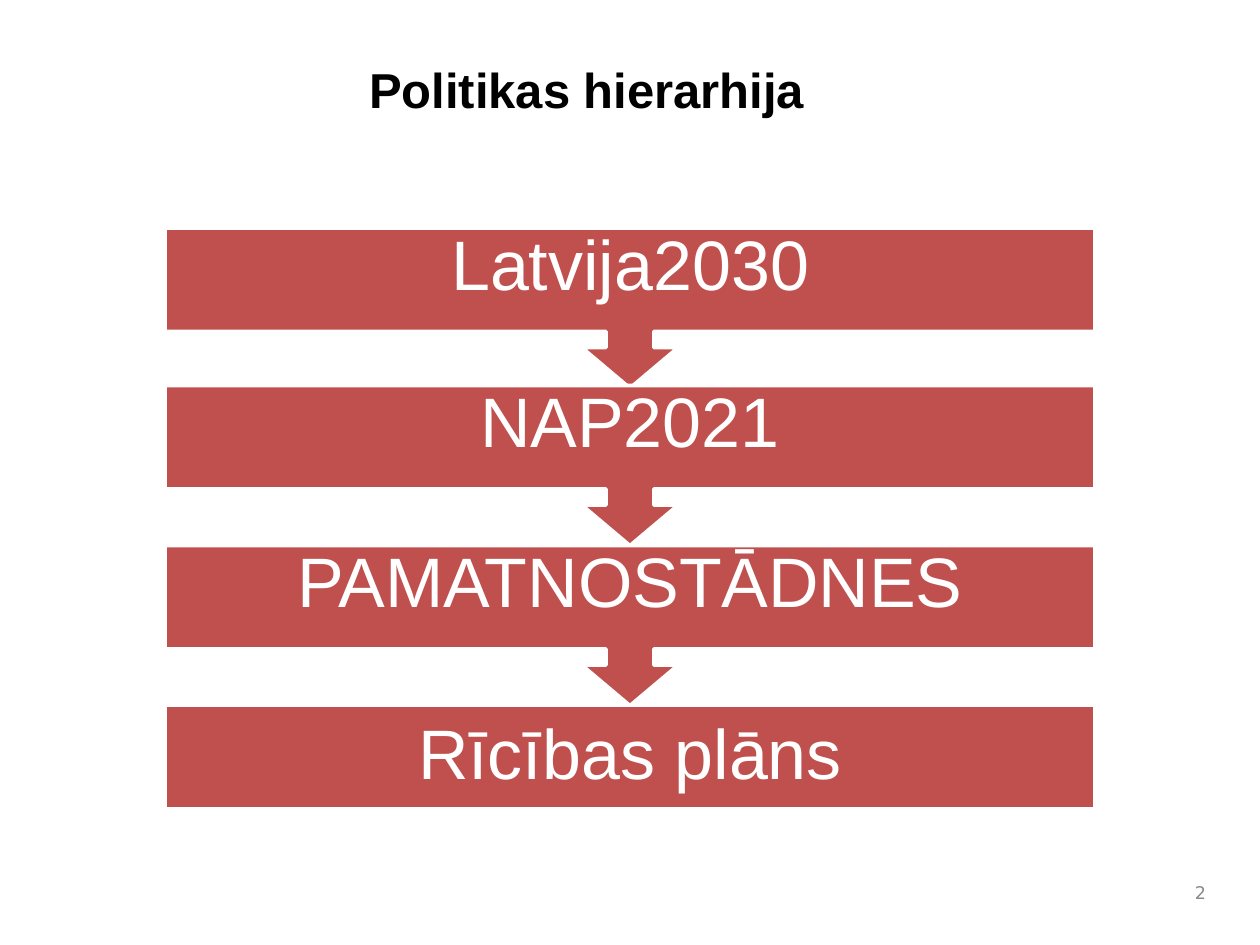
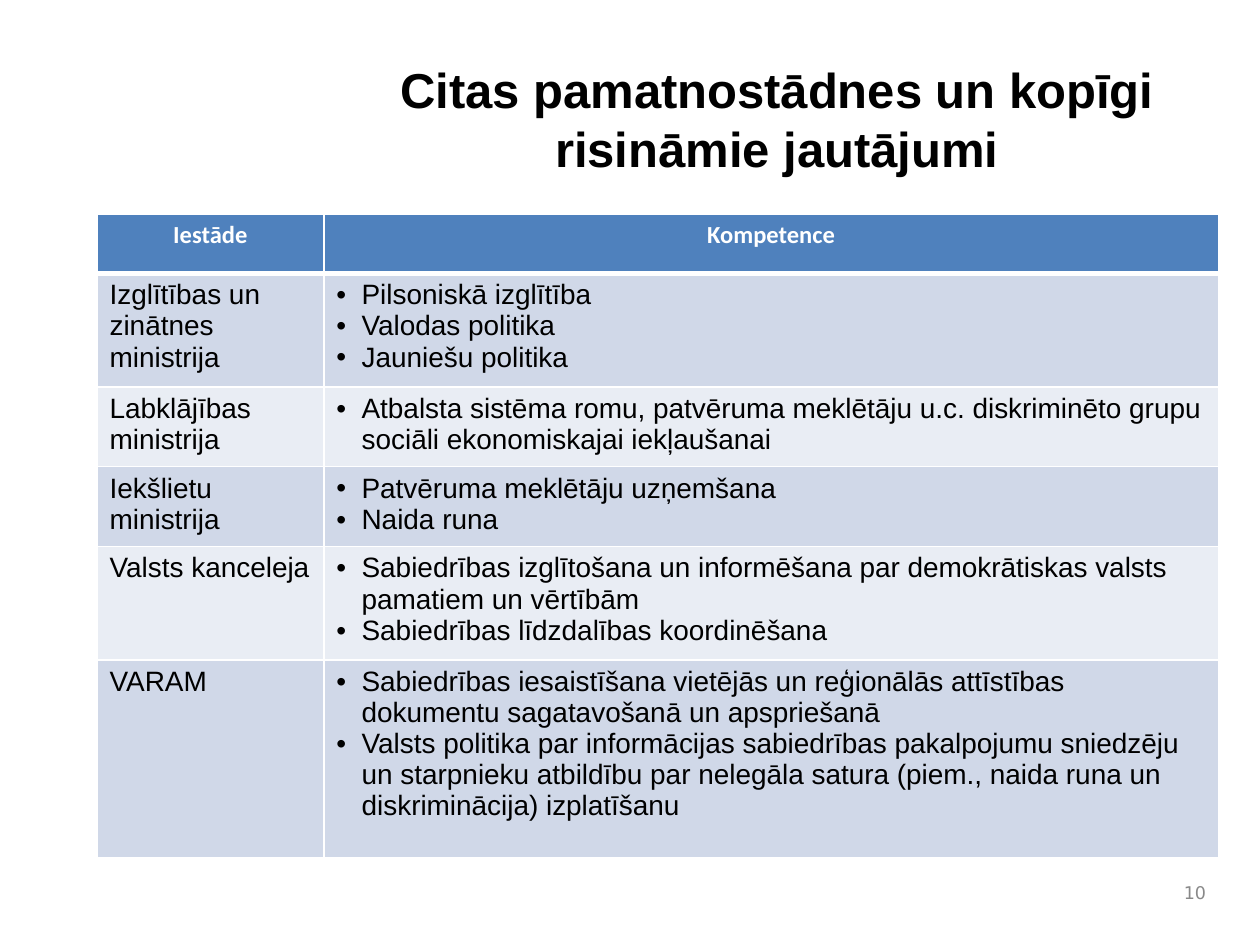
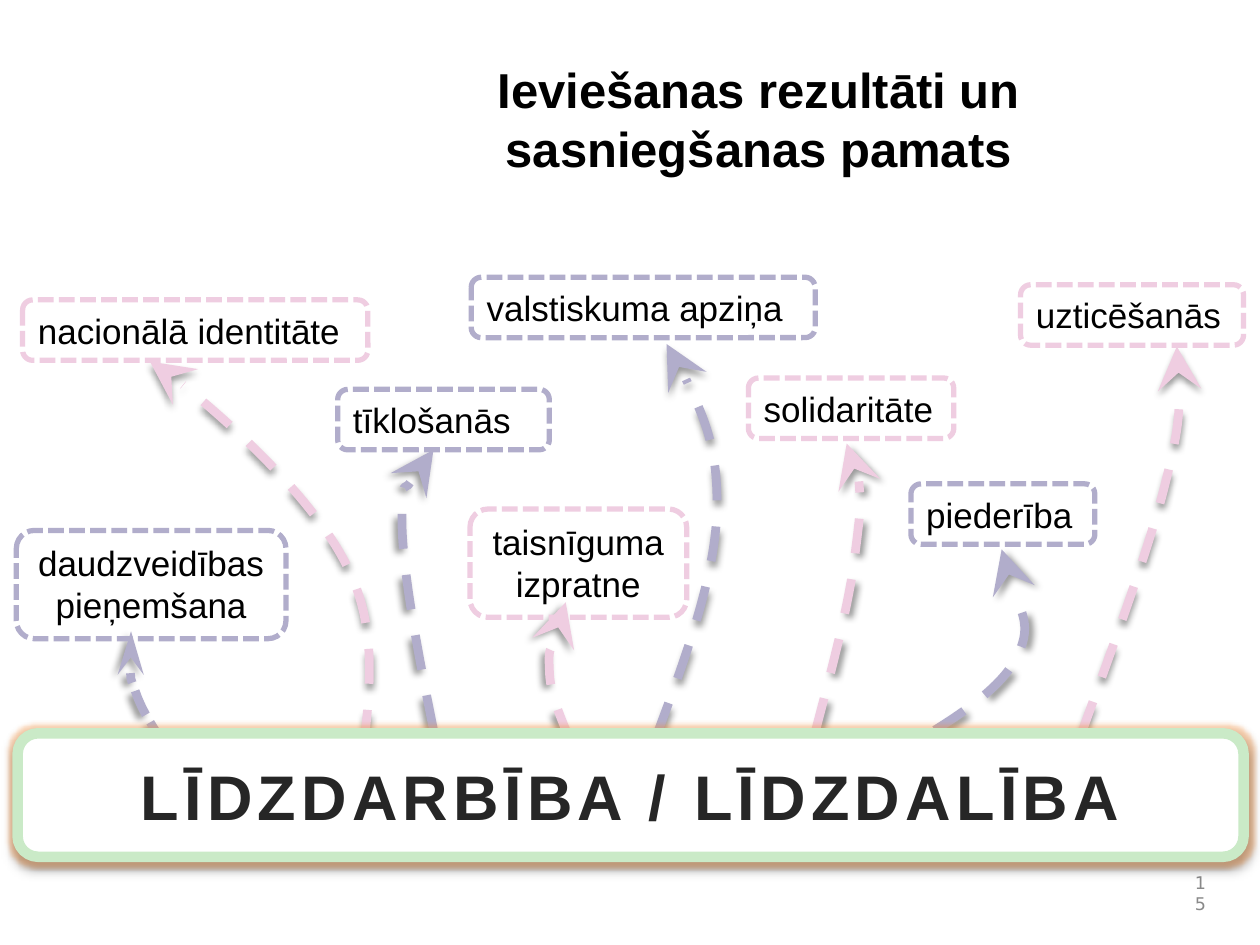
from typing import NamedTuple, Optional

from lxml.etree import SubElement
from pptx import Presentation
from pptx.dml.color import RGBColor
from pptx.enum.dml import MSO_LINE
from pptx.enum.shapes import MSO_SHAPE
from pptx.enum.text import MSO_ANCHOR, MSO_AUTO_SIZE, PP_ALIGN
from pptx.oxml.ns import qn
from pptx.util import Inches, Pt

BLACK = RGBColor(0x00, 0x00, 0x00)
WHITE = RGBColor(0xFF, 0xFF, 0xFF)
GRAY = RGBColor(0x89, 0x89, 0x89)
CHARCOAL = RGBColor(0x26, 0x26, 0x26)
RED = RGBColor(0xC0, 0x50, 0x4D)
BLUE = RGBColor(0x4F, 0x81, 0xBD)
BAND_DARK = RGBColor(0xD0, 0xD8, 0xE8)
BAND_LIGHT = RGBColor(0xE9, 0xED, 0xF4)
PINK = RGBColor(0xEF, 0xCD, 0xE1)
LILAC = RGBColor(0xB1, 0xAD, 0xCB)
GREEN = RGBColor(0xCA, 0xEA, 0xC7)
ORANGE = RGBColor(0xF7, 0x96, 0x46)


class Level(NamedTuple):
    text: str
    top: float


class Institution(NamedTuple):
    name: str
    duties: list[str]
    height: float


class Value(NamedTuple):
    text: str
    left: float
    top: float
    width: float
    color: RGBColor
    height: float = 0.48
    align: Optional[PP_ALIGN] = None


class Arrow(NamedTuple):
    color: RGBColor
    shadow_angle: int
    points: list[tuple[float, float]]  # start, then three per curve
    dash: MSO_LINE = MSO_LINE.DASH
    head_width: str = "lg"


LEVELS = [
    Level("Latvija2030", 1.81),
    Level("NAP2021", 3.06),
    Level("PAMATNOSTĀDNES", 4.33),
    Level("Rīcības plāns", 5.6),
]

INSTITUTIONS = [
    Institution("Izglītības un zinātnes ministrija",
                ["Pilsoniskā izglītība", "Valodas politika", "Jauniešu politika"], 0.88),
    Institution("Labklājības ministrija",
                ["Atbalsta sistēma romu, patvēruma meklētāju u.c. diskriminēto grupu "
                 "sociāli ekonomiskajai iekļaušanai"], 0.62),
    Institution("Iekšlietu ministrija", ["Patvēruma meklētāju uzņemšana", "Naida runa"], 0.62),
    Institution("Valsts kanceleja",
                ["Sabiedrības izglītošana un informēšana par demokrātiskas valsts "
                 "pamatiem un vērtībām",
                 "Sabiedrības līdzdalības koordinēšana"], 0.88),
    Institution("VARAM",
                ["Sabiedrības iesaistīšana vietējās un reģionālās attīstības dokumentu "
                 "sagatavošanā un apspriešanā",
                 "Valsts politika par informācijas sabiedrības pakalpojumu sniedzēju un "
                 "starpnieku atbildību par nelegāla satura (piem., naida runa un "
                 "diskriminācija) izplatīšanu"], 1.57),
]

VALUES = [
    Value("piederība", 7.23, 3.84, 1.46, LILAC),
    Value("nacionālā identitāte", 0.18, 2.38, 2.74, PINK),
    Value("valstiskuma apziņa", 3.74, 2.2, 2.73, LILAC),
    Value("uzticēšanās", 8.1, 2.26, 1.77, PINK),
    Value("solidaritāte", 5.94, 3, 1.63, PINK),
    Value("tīklošanās", 2.68, 3.09, 1.68, LILAC),
    Value("taisnīguma izpratne", 3.73, 4.04, 1.72, PINK, 0.86, PP_ALIGN.CENTER),
    Value("daudzveidības pieņemšana", 0.13, 4.21, 2.14, LILAC, 0.86, PP_ALIGN.CENTER),
]

ARROWS = [
    Arrow(LILAC, 135, [(1.47, 6.13), (1.31, 5.92), (1.16, 5.71), (1.09, 5.53),
                       (1.02, 5.34), (1.03, 5.37), (1.04, 5.01)], MSO_LINE.SQUARE_DOT, "med"),
    Arrow(PINK, 90, [(2.89, 5.91), (2.94, 5.41), (3, 4.92), (2.71, 4.41),
                     (2.43, 3.91), (1.47, 3.01), (1.19, 2.87)]),
    Arrow(LILAC, 135, [(3.44, 5.79), (3.31, 5.15), (3.19, 4.5), (3.19, 4.13),
                       (3.19, 3.76), (3.4, 3.69), (3.44, 3.57)]),
    Arrow(PINK, 135, [(4.53, 5.89), (4.45, 5.69), (4.36, 5.5), (4.36, 5.31),
                      (4.35, 5.13), (4.5, 4.85), (4.49, 4.78)]),
    Arrow(LILAC, 90, [(5.21, 5.84), (5.45, 5.2), (5.68, 4.56), (5.69, 4.04),
                      (5.7, 3.52), (5.42, 2.9), (5.29, 2.73)]),
    Arrow(PINK, 45, [(6.47, 5.81), (6.61, 5.28), (6.75, 4.75), (6.79, 4.37),
                     (6.84, 3.99), (6.84, 3.63), (6.72, 3.52)]),
    Arrow(LILAC, 45, [(7, 6.04), (7.44, 5.79), (7.89, 5.53), (8.05, 5.25),
                      (8.21, 4.97), (7.99, 4.61), (7.95, 4.36)]),
    Arrow(PINK, 90, [(8.58, 5.83), (8.84, 5.11), (9.11, 4.38), (9.24, 3.87),
                     (9.37, 3.36), (9.39, 2.87), (9.34, 2.75)]),
]


# Text and formatting helpers
def write_text(frame, *lines: str, size: float, color: RGBColor = BLACK, font: str = "Arial",
               bold: bool = False, align: Optional[PP_ALIGN] = None, bullet: bool = False,
               line_spacing: Optional[float] = None, tracking: float = 0) -> None:
    for index, line in enumerate(lines):
        paragraph = frame.add_paragraph() if index else frame.paragraphs[0]
        paragraph.alignment = align or PP_ALIGN.LEFT
        if line_spacing:
            paragraph.line_spacing = line_spacing
        if bullet:
            properties = paragraph._p.get_or_add_pPr()
            properties.set("marL", str(Inches(0.2)))
            properties.set("indent", str(-Inches(0.2)))
            SubElement(properties, qn("a:buFont"), typeface="Arial")
            SubElement(properties, qn("a:buChar"), char="•")
        run = paragraph.add_run()
        run.text = line
        run.font.name, run.font.size, run.font.bold = font, Pt(size), bold
        run.font.color.rgb = color
        if tracking:
            run._r.get_or_add_rPr().set("spc", str(round(tracking * 100)))


def set_line(shape, color: RGBColor, width: float, dash: Optional[MSO_LINE] = None) -> None:
    shape.line.color.rgb = color
    shape.line.width = Pt(width)
    if dash:
        shape.line.dash_style = dash


def add_effect(shape, kind: str, color: RGBColor, **attributes: str) -> None:
    effects = shape._element.spPr.find(qn("a:effectLst"))
    effect = SubElement(effects, qn(f"a:{kind}"), **attributes)
    tone = SubElement(effect, qn("a:srgbClr"), val=str(color))
    SubElement(tone, qn("a:alpha"), val="40000")


def add_shadow(shape, angle: int) -> None:
    add_effect(shape, "outerShdw", BLACK, blurRad=str(Pt(4)), dist=str(Pt(3)),
               dir=str(angle * 60000), rotWithShape="0")


def add_outline(slide, points: list[tuple[float, float]], close: bool):
    start, *rest = [(Inches(x), Inches(y)) for x, y in points]
    builder = slide.shapes.build_freeform(*start)
    builder.add_line_segments(rest, close=close)
    shape = builder.convert_to_shape()
    shape.shadow.inherit = False
    return shape


def add_round_box(slide, left: float, top: float, width: float, height: float):
    box = slide.shapes.add_shape(MSO_SHAPE.ROUNDED_RECTANGLE, Inches(left), Inches(top),
                                 Inches(width), Inches(height))
    box.shadow.inherit = False
    box.text_frame.word_wrap = True
    return box


# Shared slide frame: title and page number
def add_titled_slide(presentation, title: str, number: str, title_left: float = 2.83,
                     align: PP_ALIGN = PP_ALIGN.CENTER, number_width: float = 0.33):
    slide = presentation.slides.add_slide(presentation.slide_layouts[5])
    holder = slide.shapes.title
    holder.left, holder.top = Inches(title_left), Inches(0.42)
    holder.width, holder.height = Inches(9.5 - title_left), Inches(1.13)
    holder.text_frame.vertical_anchor = MSO_ANCHOR.TOP
    holder.text_frame.auto_size = MSO_AUTO_SIZE.NONE
    write_text(holder.text_frame, title, size=28, bold=True, align=align)

    page = slide.shapes.add_textbox(Inches(9.67 - number_width), Inches(6.92),
                                    Inches(number_width), Inches(0.33))
    page.text_frame.word_wrap = True
    page.text_frame.vertical_anchor = MSO_ANCHOR.MIDDLE
    write_text(page.text_frame, number, size=10, color=GRAY, font="DejaVu Sans",
               align=PP_ALIGN.RIGHT)
    return slide


# Policy hierarchy
def add_level(slide, level: Level, has_arrow: bool) -> None:
    left, right, middle = 1.31, 8.69, 5
    top, bottom = level.top, level.top + 0.82
    points = [(left, top), (right, top), (right, bottom)]
    if has_arrow:
        neck = bottom + 0.13
        half = [(0.19, bottom), (0.19, neck), (0.38, neck)]
        points += [(middle + x, y) for x, y in half]
        points.append((middle, top + 1.27))
        points += [(middle - x, y) for x, y in reversed(half)]
    points.append((left, bottom))

    shape = add_outline(slide, points, close=True)
    shape.fill.solid()
    shape.fill.fore_color.rgb = RED
    set_line(shape, WHITE, 2)
    frame = shape.text_frame
    frame.word_wrap = True
    frame.vertical_anchor = MSO_ANCHOR.MIDDLE
    frame.margin_left = frame.margin_right = frame.margin_top = Inches(0.31)
    frame.margin_bottom = Inches(0.95 if has_arrow else 0.31)
    write_text(frame, level.text, size=40, color=WHITE, align=PP_ALIGN.CENTER, line_spacing=0.9)


def build_hierarchy(presentation) -> None:
    slide = add_titled_slide(presentation, "Politikas hierarhija", "2", align=PP_ALIGN.LEFT)
    for level in LEVELS:
        add_level(slide, level, has_arrow=level is not LEVELS[-1])


# Institutions and their duties
def style_cell(cell, fill: RGBColor, bottom_width: float = 1) -> None:
    properties = cell._tc.get_or_add_tcPr()
    for side, width in (("L", 1), ("R", 1), ("T", 1), ("B", bottom_width)):
        border = SubElement(properties, qn(f"a:ln{side}"), w=str(Pt(width)))
        SubElement(SubElement(border, qn("a:solidFill")), qn("a:srgbClr"), val=str(WHITE))
    cell.fill.solid()
    cell.fill.fore_color.rgb = fill


def build_institutions(presentation) -> None:
    slide = add_titled_slide(presentation, "Citas pamatnostādnes un kopīgi risināmie jautājumi",
                             "10", number_width=0.65)
    heights = [0.47] + [institution.height for institution in INSTITUTIONS]
    table = slide.shapes.add_table(len(heights), 2, Inches(0.77), Inches(1.7),
                                   Inches(8.9), Inches(sum(heights))).table
    for column, width in zip(table.columns, (1.8, 7.1)):
        column.width = Inches(width)
    for row, height in zip(table.rows, heights):
        row.height = Inches(height)

    for column, heading in enumerate(("Iestāde", "Kompetence")):
        cell = table.cell(0, column)
        style_cell(cell, BLUE, bottom_width=3)
        write_text(cell.text_frame, heading, size=14, color=WHITE, font="Calibri", bold=True,
                   align=PP_ALIGN.CENTER)
    for row, institution in enumerate(INSTITUTIONS, start=1):
        name_cell, duties_cell = table.cell(row, 0), table.cell(row, 1)
        for cell in (name_cell, duties_cell):
            style_cell(cell, BAND_DARK if row % 2 else BAND_LIGHT)
        write_text(name_cell.text_frame, institution.name, size=16)
        write_text(duties_cell.text_frame, *institution.duties, size=16, bullet=True)


# Results growing out of participation
def add_arrow(slide, arrow: Arrow) -> None:
    shape = add_outline(slide, arrow.points, close=False)
    shape.fill.background()
    set_line(shape, arrow.color, 5, arrow.dash)
    outline = shape._element.spPr.find(qn("a:ln"))
    SubElement(outline, qn("a:tailEnd"), type="stealth", w=arrow.head_width, len="lg")
    add_shadow(shape, arrow.shadow_angle)

    # Each three straight segments become one Bézier curve
    geometry = next(shape._element.iter(qn("a:path")))
    segments = geometry.findall(qn("a:lnTo"))
    for first in range(0, len(segments), 3):
        curve = SubElement(geometry, qn("a:cubicBezTo"))
        for segment in segments[first:first + 3]:
            curve.append(segment[0])
            geometry.remove(segment)


def add_value(slide, value: Value) -> None:
    box = add_round_box(slide, value.left, value.top, value.width, value.height)
    box.fill.background()
    set_line(box, value.color, 3, MSO_LINE.SQUARE_DOT)
    box.text_frame.vertical_anchor = MSO_ANCHOR.TOP
    box.text_frame.auto_size = MSO_AUTO_SIZE.SHAPE_TO_FIT_TEXT
    write_text(box.text_frame, value.text, size=20, align=value.align)


def build_results(presentation) -> None:
    slide = add_titled_slide(presentation, "Ieviešanas rezultāti un sasniegšanas pamats", "15",
                             title_left=2.54)
    for arrow in ARROWS:
        add_arrow(slide, arrow)

    foundation = add_round_box(slide, 0.14, 5.82, 9.73, 0.98)
    foundation.fill.solid()
    foundation.fill.fore_color.rgb = WHITE
    set_line(foundation, GREEN, 6)
    add_effect(foundation, "glow", ORANGE, rad=str(Pt(5)))
    add_shadow(foundation, 90)
    foundation.text_frame.vertical_anchor = MSO_ANCHOR.MIDDLE
    write_text(foundation.text_frame, "LĪDZDARBĪBA / LĪDZDALĪBA", size=36, color=CHARCOAL,
               bold=True, align=PP_ALIGN.CENTER, tracking=3)

    for value in VALUES:
        add_value(slide, value)


def main() -> None:
    presentation = Presentation()
    presentation.slide_width, presentation.slide_height = Inches(10), Inches(7.5)
    build_hierarchy(presentation)
    build_institutions(presentation)
    build_results(presentation)
    presentation.save("out.pptx")


if __name__ == "__main__":
    main()
